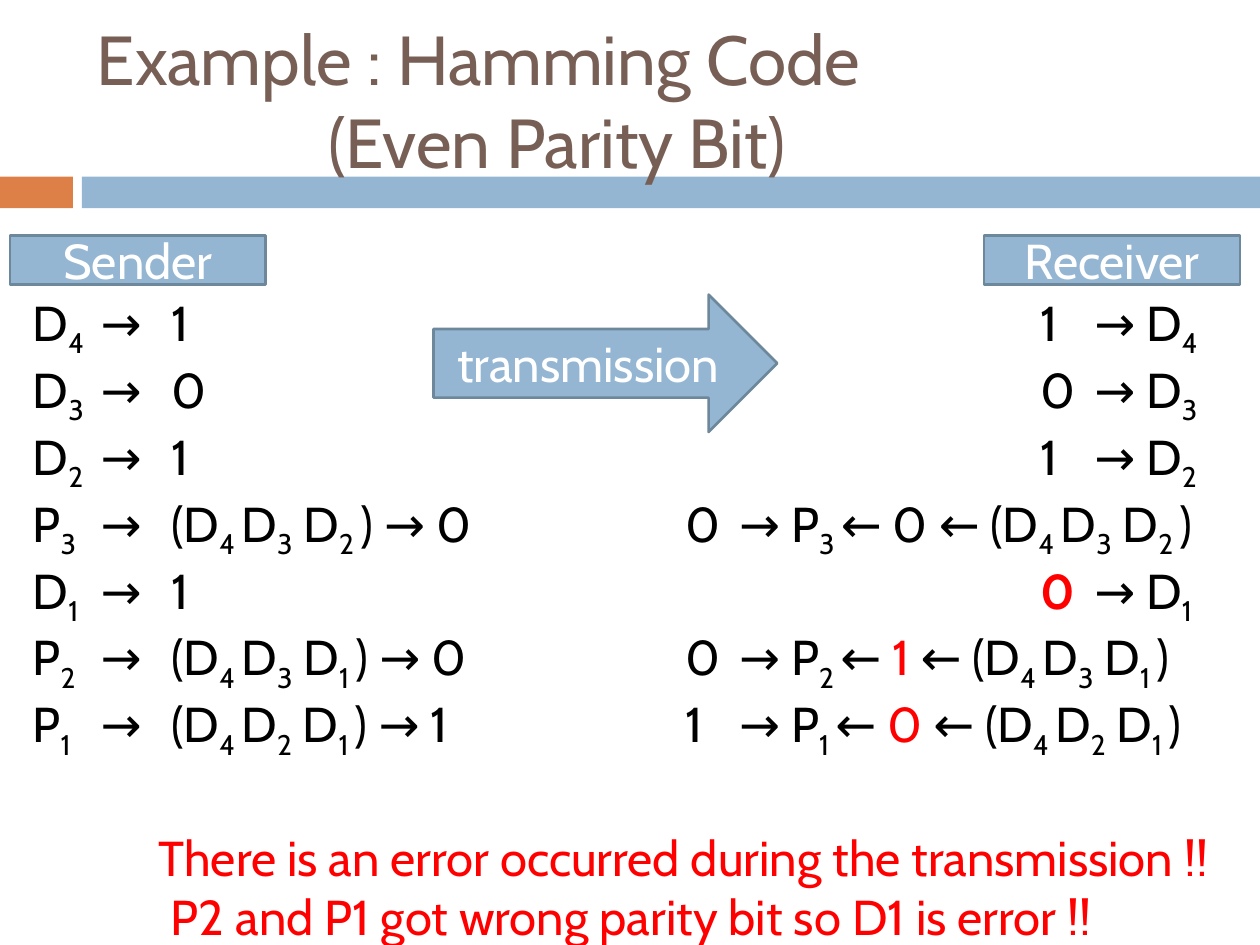
"""Build a slide that walks through a Hamming code example with even parity."""
from dataclasses import dataclass

from lxml import etree
from pptx import Presentation
from pptx.dml.color import RGBColor
from pptx.enum import shapes, text
from pptx.oxml import ns
from pptx import util as u

FONT = "Cabin"
BLUE, ORANGE, BROWN, EDGE = "94B6D2", "DD8047", "775F55", "6D879B"
WHITE, BLACK, RED = "FFFFFF", "000000", "FF0000"
BODY_SIZE = 28


@dataclass
class Piece:
    text: str
    subscript: bool = False
    color: str = BLACK
    bold: bool = False


@dataclass
class Bit:
    kind: str
    index: str
    sent: str
    received: str
    covers: str = ""
    recomputed: str = ""


@dataclass
class Block:
    left: float
    top: float
    width: float
    height: float
    fill: str
    label: str = ""
    preset: shapes.MSO_SHAPE = shapes.MSO_SHAPE.RECTANGLE


BITS = [
    Bit("D", "4", "1", "1"),
    Bit("D", "3", "0", "0"),
    Bit("D", "2", "1", "1"),
    Bit("P", "3", "0", "0", "432", "0"),
    Bit("D", "1", "1", "0"),
    Bit("P", "2", "0", "0", "431", "1"),
    Bit("P", "1", "1", "1", "421", "0"),
]
BANDS = [
    Block(0, 3.56, 1.47, 0.64, ORANGE),
    Block(1.65, 3.56, 23.75, 0.64, BLUE),
]
LABELS = [
    Block(8.74, 5.94, 6.93, 2.77, BLUE, "transmission", shapes.MSO_SHAPE.RIGHT_ARROW),
    Block(0.2, 4.75, 5.16, 0.99, BLUE, "Sender"),
    Block(19.84, 4.75, 5.16, 0.99, BLUE, "Receiver"),
]


def rgb(value: str) -> RGBColor:
    return RGBColor.from_string(value)


def style(paragraph, size: float, color: str) -> None:
    for run in paragraph.runs:
        run.font.name = FONT
        run.font.size = u.Pt(size)
        run.font.color.rgb = rgb(color)


def set_indent(paragraph, indent: float) -> None:
    properties = paragraph._p.get_or_add_pPr()
    properties.set("marL", str(u.Cm(indent)))
    properties.set("indent", "0")


def set_tabs(paragraph, stops: list[float]) -> None:
    tabs = etree.SubElement(paragraph._p.get_or_add_pPr(), ns.qn("a:tabLst"))
    for stop in stops:
        etree.SubElement(tabs, ns.qn("a:tab"), pos=str(u.Cm(stop)), algn="l")


def add_block(slide, block: Block) -> None:
    edges = (u.Cm(n) for n in (block.left, block.top, block.width, block.height))
    shape = slide.shapes.add_shape(block.preset, *edges)
    shape.shadow.inherit = False
    shape.fill.solid()
    shape.fill.fore_color.rgb = rgb(block.fill)
    if not block.label:
        shape.line.fill.background()
        return
    shape.line.color.rgb = rgb(EDGE)
    shape.line.width = u.Pt(1.5)
    frame = shape.text_frame
    frame.text = block.label
    frame.word_wrap = False
    frame.vertical_anchor = text.MSO_ANCHOR.MIDDLE
    frame.paragraphs[0].alignment = text.PP_ALIGN.CENTER
    style(frame.paragraphs[0], BODY_SIZE, WHITE)


def add_text_frame(slide, left: float, top: float, width: float, height: float):
    box = slide.shapes.add_textbox(u.Cm(left), u.Cm(top), u.Cm(width), u.Cm(height))
    box.text_frame.word_wrap = True
    return box.text_frame


def covered_bits(indexes: str) -> list[Piece]:
    first, second, third = indexes
    return [
        Piece("(D"), Piece(first + " ", True), Piece("D"), Piece(second, True),
        Piece(" D"), Piece(third + " ", True), Piece(")"),
    ]


def bit_pieces(bit: Bit) -> list[Piece]:
    name = [Piece(bit.kind), Piece(bit.index, True), Piece("\t→\t")]
    if bit.covers:
        name += covered_bits(bit.covers) + [Piece(" → ")]
    wrong = bit.received != bit.sent
    received = Piece(bit.received, color=RED if wrong else BLACK, bold=wrong)
    pieces = name + [Piece(bit.sent + "\t"), received, Piece("\t→ " + bit.kind)]
    if not bit.covers:
        return pieces + [Piece(bit.index, True)]
    check = Piece(bit.recomputed, color=BLACK if bit.recomputed == bit.received else RED)
    pieces += [Piece(bit.index + " ", True), Piece("← "), check, Piece(" ← ")]
    return pieces + covered_bits(bit.covers)


def write_bit(paragraph, bit: Bit) -> None:
    receiver = 13.16 if bit.covers else 20.32
    set_tabs(paragraph, [1.37, 2.8, receiver, receiver + 1.08])
    for piece in bit_pieces(bit):
        run = paragraph.add_run()
        run.text = piece.text
        run.font.name = FONT
        run.font.size = u.Pt(BODY_SIZE)
        run.font.bold = piece.bold
        run.font.color.rgb = rgb(piece.color)
        if piece.subscript:
            run._r.get_or_add_rPr().set("baseline", "-25000")


def add_title(slide) -> None:
    frame = add_text_frame(slide, 1.7, 0.64, 22.66, 2.74)
    frame.vertical_anchor = text.MSO_ANCHOR.MIDDLE
    frame.text = "Example : Hamming Code\n(Even Parity Bit)"
    for paragraph in frame.paragraphs:
        style(paragraph, 39.6, BROWN)
    set_indent(frame.paragraphs[1], 4.67)


def add_body(slide) -> None:
    frame = add_text_frame(slide, 0.41, 5.77, 24.61, 13.03)
    for number, bit in enumerate(BITS):
        write_bit(frame.add_paragraph() if number else frame.paragraphs[0], bit)
    error = frame.add_paragraph()
    error.text = "There is an error occurred during the transmission !!"
    error.space_before = u.Pt(38)
    set_indent(error, 2.54)
    cause = frame.add_paragraph()
    cause.text = "P2 and P1 got wrong parity bit so D1 is error !!"
    cause.alignment = text.PP_ALIGN.CENTER
    for paragraph in (error, cause):
        style(paragraph, BODY_SIZE, RED)


def main() -> None:
    presentation = Presentation()
    presentation.slide_width, presentation.slide_height = u.Cm(25.4), u.Cm(19.05)
    slide = presentation.slides.add_slide(presentation.slide_layouts[6])
    for band in BANDS:
        add_block(slide, band)
    add_title(slide)
    add_body(slide)
    for label in LABELS:
        add_block(slide, label)
    presentation.save("out.pptx")


if __name__ == "__main__":
    main()
